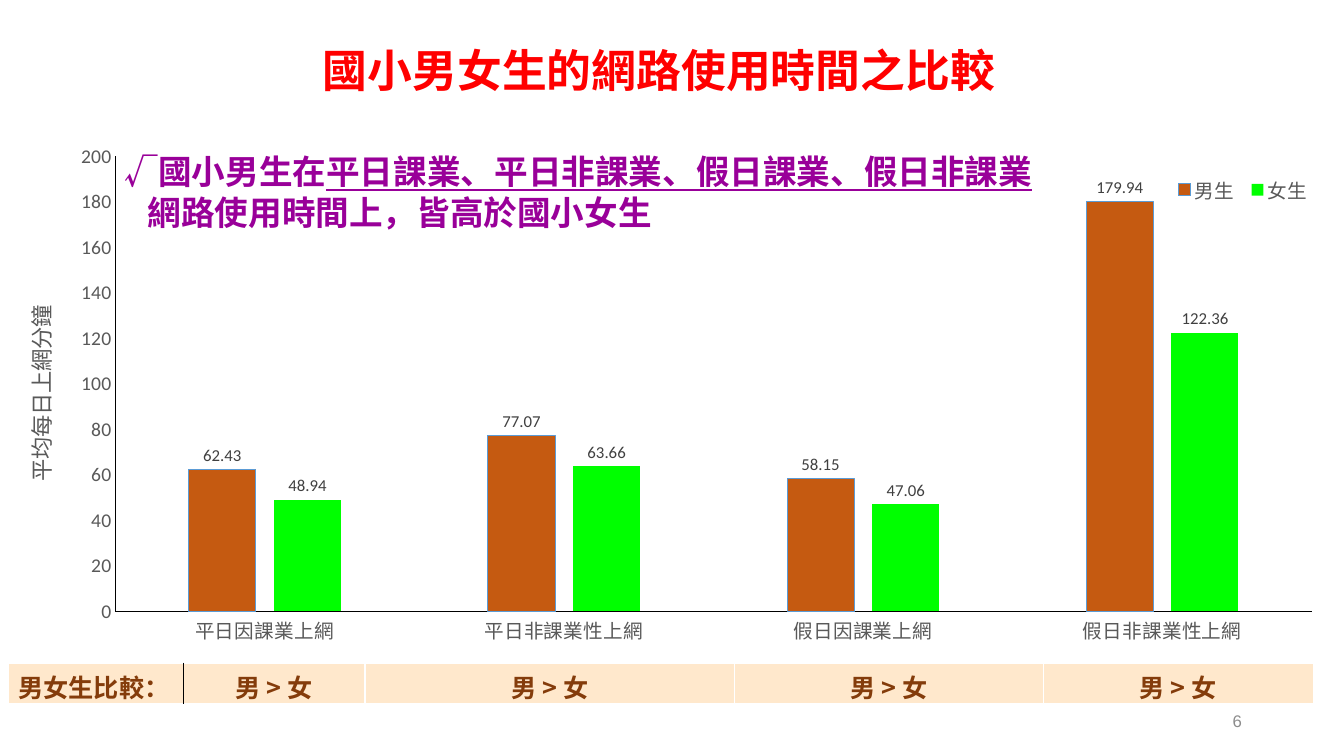
import pptx
import pptx.chart.data
import pptx.dml.color
import pptx.enum.chart
import pptx.enum.text
import pptx.oxml
import pptx.oxml.ns
import pptx.util
from lxml import etree

Pt = pptx.util.Pt
qn = pptx.oxml.ns.qn
ALIGN = pptx.enum.text.PP_ALIGN
ANCHOR = pptx.enum.text.MSO_ANCHOR
KIND = pptx.enum.chart

HUES = {"red": "FF0000", "purple": "990099", "brown": "843C0B", "cream": "FFE8CC",
        "boys": "C55A11", "girls": "00FF00", "edge": "5B9BD5", "axis": "000000",
        "gray": "595959", "label": "404040", "page": "8C8C8C", "white": "FFFFFF"}
CJK = "Noto Sans CJK SC"

TITLE = "國小男女生的網路使用時間之比較"
CLAIM = [("√國小男生在", False), ("平日課業、平日非課業、假日課業、假日非課業", True)]
REST = "網路使用時間上，皆高於國小女生"
PAGE = "6"
UNIT = "平均每日上網分鐘"
CATS = ["平日因課業上網", "平日非課業性上網", "假日因課業上網", "假日非課業性上網"]
SERIES = [("男生", "boys", [62.43, 77.07, 58.15, 179.94]),
          ("女生", "girls", [48.94, 63.66, 47.06, 122.36])]
CELLS = ["男女生比較："] + ["男 > 女"] * len(CATS)
WIDTHS = [125.3, 129.6, 264.2, 220.3, 193]

TITLE_BOX = (56.9, 0, 828, 104.4)
CLAIM_BOX = (82.1, 104.4, 679.7, 65.5)
CHART_BOX = (13, 103, 938.2, 397.4)
TABLE_BOX = (5.8, 473.8, sum(WIDTHS), 28.4)
PAGE_BOX = (678.2, 500.4, 216, 28.8)
PLOT = (0.074, 0.017, 0.911, 0.822)
LEGEND = (0.875, 0.05, 0.115, 0.055)


def color(name):
    return pptx.dml.color.RGBColor.from_string(HUES[name])


def style(font, size, hue, face=CJK, bold=False):
    font.size, font.bold, font.name = Pt(size), bold, face
    font.color.rgb = color(hue)
    if face == CJK:
        latin = font._element.find(qn("a:latin"))
        east = etree.Element(qn("a:ea"), typeface=face)
        latin.addnext(east)


def add_box(slide, box, anchor=ANCHOR.TOP):
    frame = slide.shapes.add_textbox(*map(Pt, box)).text_frame
    frame.word_wrap, frame.vertical_anchor = True, anchor
    return frame


def add_line(slide, box, text, align, *look):
    para = add_box(slide, box, ANCHOR.MIDDLE).paragraphs[0]
    para.text, para.alignment = text, align
    style(para.font, *look)
    return para


def add_claim(slide):
    frame = add_box(slide, CLAIM_BOX)
    first, second = frame.paragraphs[0], frame.add_paragraph()
    for text, under in CLAIM:
        run = first.add_run()
        run.text, run.font.underline = text, under
    second.text = REST
    second._p.get_or_add_pPr().set("marL", str(Pt(16.4)))
    for para in frame.paragraphs:
        style(para.font, 24, "purple", CJK, True)


def place(parent, box, inner=False):
    old = parent.find(qn("c:layout"))
    if old is not None:
        parent.remove(old)
    layout = etree.Element(qn("c:layout"))
    manual = etree.SubElement(layout, qn("c:manualLayout"))
    if inner:
        etree.SubElement(manual, qn("c:layoutTarget"), val="inner")
    for tag in ("xMode", "yMode"):
        etree.SubElement(manual, qn("c:" + tag), val="edge")
    for tag, part in zip("xywh", box):
        etree.SubElement(manual, qn("c:" + tag), val=str(part))
    if inner:
        parent.insert(0, layout)
    else:
        parent.find(qn("c:legendPos")).addnext(layout)


def add_chart(slide):
    data = pptx.chart.data.CategoryChartData(number_format="0.00")
    data.categories = CATS
    for name, _, vals in SERIES:
        data.add_series(name, vals)
    kind = KIND.XL_CHART_TYPE.COLUMN_CLUSTERED
    chart = slide.shapes.add_chart(kind, *map(Pt, CHART_BOX), data).chart
    style(chart.font, 10, "axis", "Calibri")
    chart.has_title = False

    plot = chart.plots[0]
    plot.gap_width, plot.overlap, plot.vary_by_categories = 219, -27, False
    for series, (_, hue, _) in zip(plot.series, SERIES):
        series.format.fill.solid()
        series.format.fill.fore_color.rgb = color(hue)
        labels = series.data_labels
        labels.show_value = True
        labels.position = KIND.XL_LABEL_POSITION.OUTSIDE_END
        labels.number_format, labels.number_format_is_linked = "0.00", False
        style(labels.font, 12, "label", "Calibri")
    edge = plot.series[0].format.line
    edge.color.rgb, edge.width = color("edge"), Pt(0.75)

    for axis, face in ((chart.category_axis, CJK), (chart.value_axis, "Calibri")):
        axis.has_major_gridlines = False
        axis.major_tick_mark = axis.minor_tick_mark = KIND.XL_TICK_MARK.NONE
        axis.format.line.color.rgb = color("axis")
        axis.format.line.width = Pt(0.75)
        style(axis.tick_labels.font, 14, "gray", face)
    scale = chart.value_axis
    scale.minimum_scale, scale.maximum_scale, scale.major_unit = 0, 200, 20
    scale.tick_labels.number_format = "0"
    scale.tick_labels.number_format_is_linked = False
    para = scale.axis_title.text_frame.paragraphs[0]
    para.text = UNIT
    style(para.font, 16, "gray")

    chart.has_legend = True
    chart.legend.position = KIND.XL_LEGEND_POSITION.BOTTOM
    chart.legend.include_in_layout = False
    style(chart.legend.font, 14, "gray")
    place(chart.legend._element, LEGEND)
    place(chart._chartSpace.chart.plotArea, PLOT, True)


def add_border(cell, side, hue):
    line = etree.Element(qn("a:ln" + side), w=str(Pt(1)))
    fill = etree.SubElement(line, qn("a:solidFill"))
    etree.SubElement(fill, qn("a:srgbClr"), val=HUES[hue])
    return line


def add_table(slide):
    table = slide.shapes.add_table(1, len(CELLS), *map(Pt, TABLE_BOX)).table
    table.first_row = table.horz_banding = False
    for col, (text, width) in enumerate(zip(CELLS, WIDTHS)):
        table.columns[col].width = Pt(width)
        cell = table.cell(0, col)
        cell.fill.solid()
        cell.fill.fore_color.rgb = color("cream")
        para = cell.text_frame.paragraphs[0]
        para.text = text
        para.alignment = ALIGN.CENTER if col else ALIGN.LEFT
        style(para.font, 18, "brown", CJK, True)
        dark = {0: "R", 1: "L"}.get(col)
        for spot, side in enumerate("LRTB"):
            hue = "axis" if side == dark else "white"
            cell._tc.tcPr.insert(spot, add_border(cell, side, hue))


def main():
    """Build the slide comparing boys' and girls' time online."""
    deck = pptx.Presentation()
    deck.slide_width, deck.slide_height = Pt(960), Pt(540)
    slide = deck.slides.add_slide(deck.slide_layouts[6])
    title = add_line(slide, TITLE_BOX, TITLE, ALIGN.CENTER, 32, "red", CJK, True)
    title.line_spacing = 0.9
    add_chart(slide)
    add_claim(slide)
    add_table(slide)
    add_line(slide, PAGE_BOX, PAGE, ALIGN.RIGHT, 12, "page", "Arial")
    deck.save("out.pptx")


if __name__ == "__main__":
    main()
